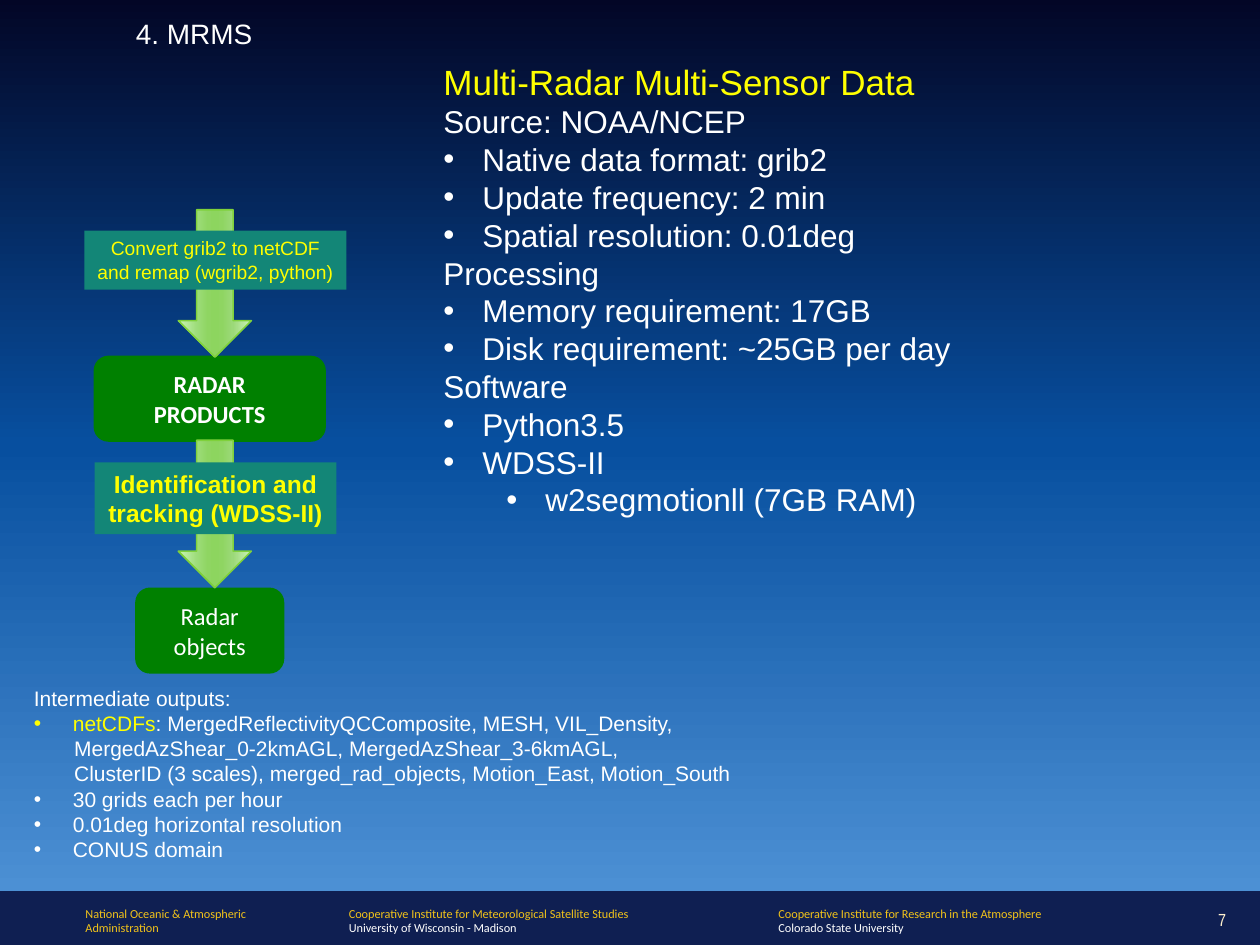
"""Build the radar data slide with its processing flow."""
from dataclasses import dataclass

from lxml import etree
from pptx import Presentation
from pptx.dml.color import RGBColor
from pptx.enum.shapes import MSO_SHAPE
from pptx.enum.text import MSO_ANCHOR, PP_ALIGN
from pptx.oxml.ns import qn
from pptx.util import Inches, Pt

RECT, ROUND, ARROW = MSO_SHAPE.RECTANGLE, MSO_SHAPE.ROUNDED_RECTANGLE, MSO_SHAPE.RIGHT_ARROW
TOP, MIDDLE = MSO_ANCHOR.TOP, MSO_ANCHOR.MIDDLE
LEFT, CENTER, RIGHT = PP_ALIGN.LEFT, PP_ALIGN.CENTER, PP_ALIGN.RIGHT


@dataclass(frozen=True)
class Theme:
    sans: str = "Arial"
    label: str = "Calibri"
    narrow: str = "Arial Narrow"
    navy: str = "0F1F52"
    white: str = "FFFFFF"
    yellow: str = "FFFF00"
    gold: str = "F2C31A"
    cream: str = "FFF1CE"
    green: str = "008000"
    teal: str = "138677"
    edge: str = "7FD13B"
    sky: tuple = ((0, "030626"), (50, "074F9F"), (100, "4C90D4"))
    lime: tuple = ((0, "CCF2BB"), (25, "9CD979"), (40, "8FD562"), (50, "8DD55F"),
                   (60, "8FD562"), (75, "9EDD7B"), (100, "CBF4B9"))
    head: int = 20
    body: int = 18
    title: int = 16
    step: int = 14
    note: int = 12
    small: int = 11
    page: int = 10
    foot: int = 7


class Deck:
    """Hold the theme and the current slide."""

    def __init__(self, theme):
        self.theme = theme
        self.show = Presentation()
        self.show.slide_width, self.show.slide_height = Inches(10), Inches(7.5)
        self.slide = self.show.slides.add_slide(self.show.slide_layouts[6])
        fill = self.slide.background.fill
        fill.solid()
        fill.fore_color.rgb = RGBColor.from_string(theme.navy)

    def shape(self, kind, place, fill, line=None):
        """Add a preset shape with a plain or graded fill."""
        item = self.slide.shapes.add_shape(kind, *map(Inches, place))
        item.shadow.inherit = False
        if isinstance(fill, str):
            item.fill.solid()
            item.fill.fore_color.rgb = RGBColor.from_string(fill)
        else:
            self.grade(item, fill)
        if line:
            item.line.color.rgb = RGBColor.from_string(line)
            item.line.width = Pt(0.94)
        else:
            item.line.fill.background()
        return item

    def grade(self, item, stops):
        """Give a shape a gradient along its own height."""
        item.fill.gradient()
        item.fill.gradient_angle = 270
        group = next(item._element.iter(qn("a:gsLst")))
        for old in list(group):
            group.remove(old)
        for spot, color in stops:
            stop = etree.SubElement(group, qn("a:gs"), pos=str(spot * 1000))
            etree.SubElement(stop, qn("a:srgbClr"), val=color)

    def arrow(self, place):
        """Add a graded arrow that points down."""
        self.shape(ARROW, place, self.theme.lime, self.theme.edge).rotation = 90

    def label(self, kind, place, fill, lines, size, color, face, bold=False, line=None, anchor=TOP):
        """Add a filled shape with centred text."""
        frame = self.shape(kind, place, fill, line).text_frame
        frame.word_wrap = True
        frame.vertical_anchor = anchor
        for num, text in enumerate(lines):
            self.para(frame, num, text, size, color, face, CENTER, bold)

    def box(self, place, wrap=True, anchor=TOP):
        """Add a text box and return its frame."""
        frame = self.slide.shapes.add_textbox(*map(Inches, place)).text_frame
        frame.word_wrap = wrap
        frame.vertical_anchor = anchor
        return frame

    def para(self, frame, num, text, size, color, face, align=LEFT, bold=False,
             indent=0, bullet=False, lead=None):
        """Write one paragraph, with a coloured lead if wanted."""
        par = frame.add_paragraph() if num else frame.paragraphs[0]
        par.alignment = align
        props = par._p.get_or_add_pPr()
        if indent:
            props.set("marL", str(Inches(indent)))
        if bullet:
            props.set("indent", str(Inches(-0.31)))
            etree.SubElement(props, qn("a:buFont"), typeface=self.theme.sans)
            etree.SubElement(props, qn("a:buChar"), char="•")
        if lead:
            run = par.add_run()
            run.text = lead
            run.font.color.rgb = RGBColor.from_string(self.theme.yellow)
        par.add_run().text = text
        font = par.font
        font.name, font.size, font.bold = face, Pt(size), bold
        font.color.rgb = RGBColor.from_string(color)


def main():
    """Draw the slide and save it."""
    look = Theme()
    deck = Deck(look)
    deck.shape(RECT, (0, -0.02, 10, 7.09), look.sky)

    feet = (
        (0.58, 1.58, "National Oceanic & Atmospheric", "Administration", look.gold),
        (2.67, 2.92, "Cooperative Institute for Meteorological Satellite Studies",
         "University of Wisconsin - Madison", look.white),
        (6.08, 2.92, "Cooperative Institute for Research in the Atmosphere",
         "Colorado State University", look.white),
    )
    for left, width, first, second, color in feet:
        frame = deck.box((left, 7.14, width, 0.34))
        deck.para(frame, 0, first, look.foot, look.gold, look.label)
        deck.para(frame, 1, second, look.foot, color, look.label)

    frame = deck.box((9.33, 7.17, 0.5, 0.25), anchor=MIDDLE)
    deck.para(frame, 0, "7", look.page, look.cream, look.narrow, RIGHT)
    frame = deck.box((0.25, 0.08, 2.58, 0.37))
    deck.para(frame, 0, "4. MRMS", look.title, look.white, look.sans, CENTER)

    stages = (
        ((0.75, 2.83, 1.83, 0.67), ("RADAR", "PRODUCTS"), True),
        ((1.08, 4.67, 1.17, 0.67), ("Radar objects",), False),
    )
    for place, lines, bold in stages:
        deck.label(ROUND, place, look.green, lines, look.step, look.white, look.label,
                   bold, look.green, MIDDLE)

    steps = (
        (1.96, (0.67, 1.83, 2.08, 0.47), "Convert grib2 to netCDF and remap (wgrib2, python)",
         look.small, False),
        (3.79, (0.75, 3.67, 1.92, 0.57), "Identification and tracking (WDSS-II)",
         look.step, True),
    )
    for top, place, text, size, bold in steps:
        deck.arrow((1.12, top, 1.17, 0.58))
        deck.label(RECT, place, look.teal, (text,), size, look.yellow, look.sans, bold)

    facts = (
        ("Source: NOAA/NCEP", 0),
        ("Native data format: grib2", 0.31),
        ("Update frequency: 2 min", 0.31),
        ("Spatial resolution: 0.01deg", 0.31),
        ("Processing", 0),
        ("Memory requirement: 17GB", 0.31),
        ("Disk requirement: ~25GB per day", 0.31),
        ("Software", 0),
        ("Python3.5", 0.31),
        ("WDSS-II", 0.31),
        ("w2segmotionll (7GB RAM)", 0.81),
    )
    frame = deck.box((3.42, 0.43, 4.41, 3.77), wrap=False)
    deck.para(frame, 0, "Multi-Radar Multi-Sensor Data", look.head, look.yellow, look.sans)
    for num, (text, indent) in enumerate(facts, 1):
        deck.para(frame, num, text, look.body, look.white, look.sans,
                  indent=indent, bullet=indent > 0)

    notes = (
        ("Intermediate outputs:", 0, False, None),
        (": MergedReflectivityQCComposite, MESH, VIL_Density,", 0.31, True, "netCDFs"),
        ("MergedAzShear_0-2kmAGL, MergedAzShear_3-6kmAGL,", 0.32, False, None),
        ("ClusterID (3 scales), merged_rad_objects, Motion_East, Motion_South", 0.32, False, None),
        ("30 grids each per hour", 0.31, True, None),
        ("0.01deg horizontal resolution", 0.31, True, None),
        ("CONUS domain", 0.31, True, None),
    )
    frame = deck.box((0.17, 5.39, 5.75, 1.51))
    for num, (text, indent, bullet, lead) in enumerate(notes):
        deck.para(frame, num, text, look.note, look.white, look.sans,
                  indent=indent, bullet=bullet, lead=lead)

    deck.show.save("out.pptx")


if __name__ == "__main__":
    main()
